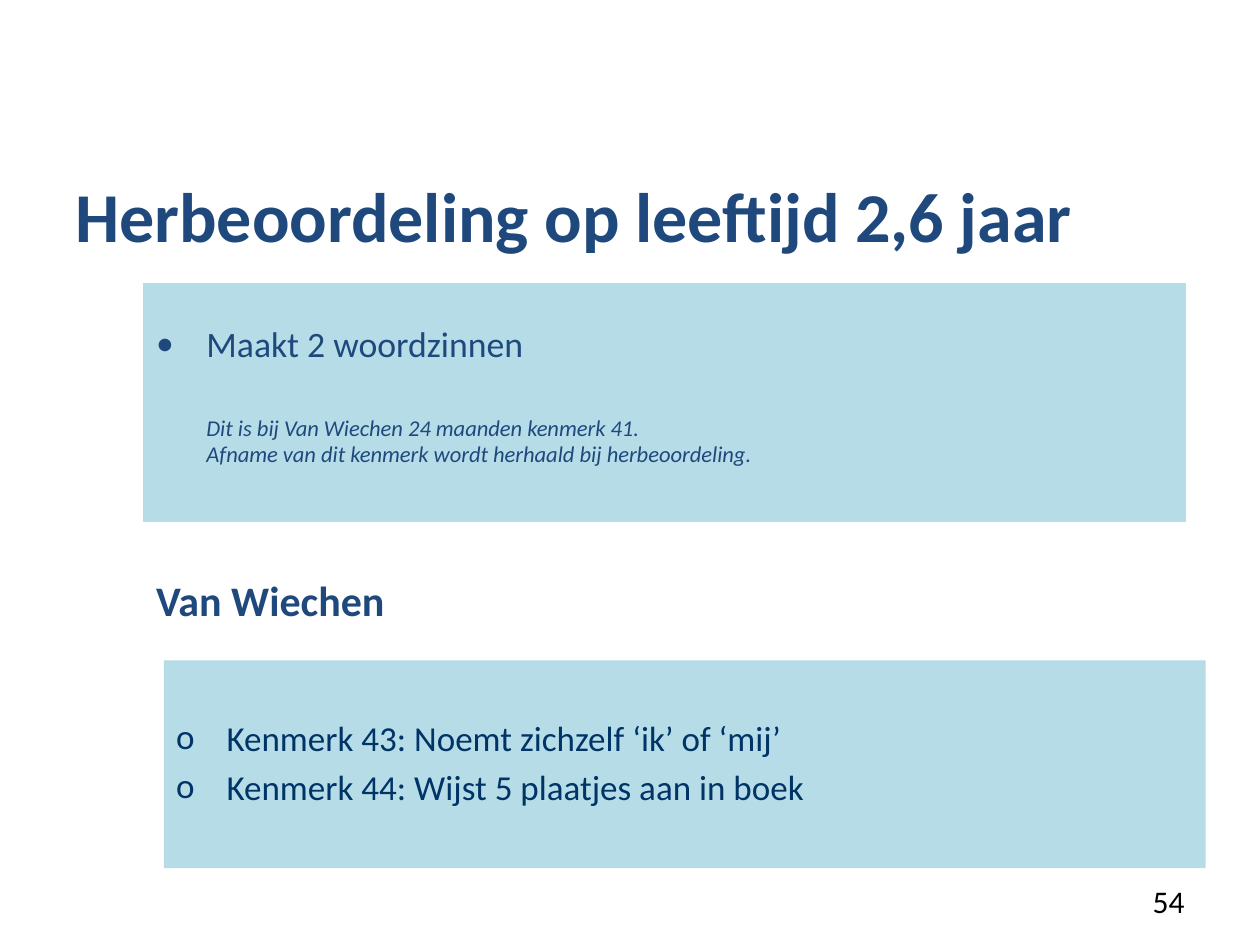
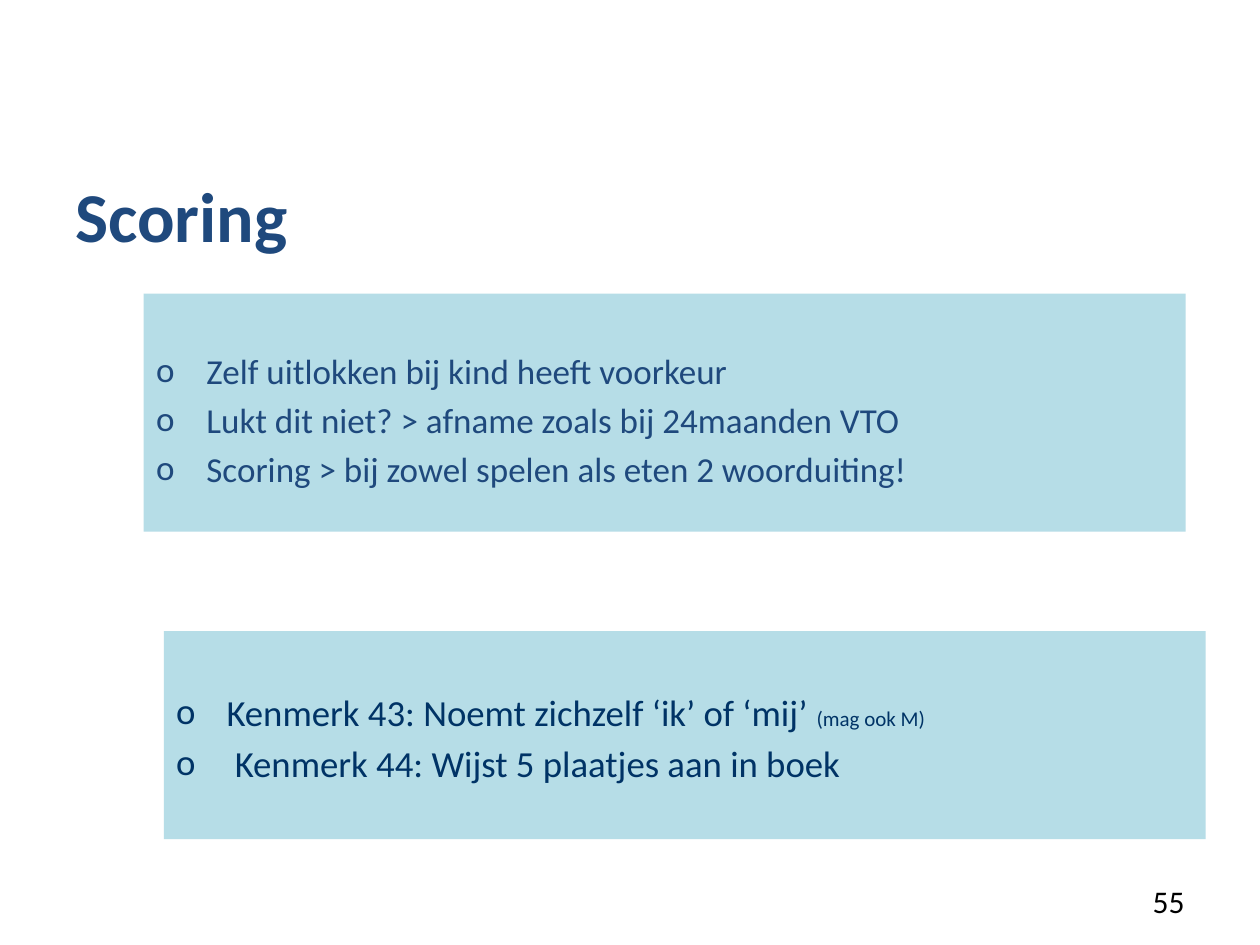
from lxml import etree
from pptx import Presentation
from pptx.dml.color import RGBColor
from pptx.enum.shapes import MSO_SHAPE
from pptx.enum.text import MSO_ANCHOR, PP_ALIGN
from pptx.oxml.ns import qn
from pptx.util import Pt

RECTANGLE = MSO_SHAPE.RECTANGLE
TOP, BOTTOM = MSO_ANCHOR.TOP, MSO_ANCHOR.BOTTOM
LEFT, RIGHT = PP_ALIGN.LEFT, PP_ALIGN.RIGHT

BLUE = RGBColor(0x1F, 0x49, 0x7D)
NAVY = RGBColor(0x00, 0x33, 0x66)
PALE_BLUE = RGBColor(0xB6, 0xDD, 0xE7)
BLACK = RGBColor(0x00, 0x00, 0x00)
FONT = "Calibri"
INDENT = 28.8
PANEL_WIDTH = 595.44


def write(frame, text, size, color, bold=False, italic=False, align=LEFT, bullet=None,
          indent=0, before=0, spacing=1, suffix="", suffix_size=12):
    paragraph = frame.paragraphs[0]
    if paragraph.runs:
        paragraph = frame.add_paragraph()
    paragraph.alignment = align
    paragraph.space_before = Pt(before)
    paragraph.line_spacing = spacing
    properties = paragraph._p.get_or_add_pPr()
    properties.set("marL", str(Pt(indent)))
    properties.set("indent", str(-Pt(indent) if bullet else 0))
    if bullet:
        etree.SubElement(properties, qn("a:buFont"), typeface=FONT)
        etree.SubElement(properties, qn("a:buChar"), char=bullet)
    for part, part_size in ((text, size), (suffix, suffix_size)):
        if part:
            run = paragraph.add_run()
            run.text = part
            font = run.font
            font.name, font.size = FONT, Pt(part_size)
            font.bold, font.italic = bold, italic
            font.color.rgb = color


class Deck:
    """Holds the presentation style and the slide being filled."""

    def __init__(self):
        self.presentation = Presentation()
        self.presentation.slide_width = Pt(720)
        self.presentation.slide_height = Pt(540)
        self.slide = None

    def start(self, title, number):
        self.slide = self.presentation.slides.add_slide(self.presentation.slide_layouts[6])
        self.label(title, 36, 95.04, 648, 90, size=40, color=BLUE, bold=True)
        self.label(number, 516.24, 500.4, 167.76, 28.8, size=18, color=BLACK, align=RIGHT)

    def label(self, text, left, top, width, height, anchor=TOP, **style):
        box = self.slide.shapes.add_textbox(Pt(left), Pt(top), Pt(width), Pt(height))
        box.text_frame.word_wrap = True
        box.text_frame.vertical_anchor = anchor
        write(box.text_frame, text, **style)

    def panel(self, left, top, height, inset, outlined=False):
        panel = self.slide.shapes.add_shape(
            RECTANGLE, Pt(left), Pt(top), Pt(PANEL_WIDTH), Pt(height))
        panel.shadow.inherit = False
        panel.fill.solid()
        panel.fill.fore_color.rgb = PALE_BLUE
        if outlined:
            panel.line.color.rgb = PALE_BLUE
            panel.line.width = Pt(0.75)
        else:
            panel.line.fill.background()
        frame = panel.text_frame
        frame.word_wrap = True
        frame.vertical_anchor = TOP
        frame.margin_top = Pt(inset)
        return frame

    def bullets(self, frame, items, size, color):
        for position, item in enumerate(items):
            write(frame, item, size, color, bullet="o", indent=INDENT,
                  before=size / 5 if position else 0)


def main():
    deck = Deck()

    deck.start("Herbeoordeling op leeftijd 2,6 jaar", "54")
    sentences = deck.panel(82.08, 162, 136.08, 26.6, outlined=True)
    write(sentences, "Maakt 2 woordzinnen", 20.4, BLUE, bullet="•", indent=INDENT, spacing=0.8)
    notes = (("Dit is bij Van Wiechen 24 maanden kenmerk 41.", 31.3),
             ("Afname van dit kenmerk wordt herhaald bij herbeoordeling.", 2.6))
    for note, gap in notes:
        write(sentences, note, 12.9, BLUE, italic=True, indent=INDENT, before=gap, spacing=0.8)
    features = deck.panel(93.6, 377.28, 118.8, 32)
    deck.bullets(features, ["Kenmerk 43: Noemt zichzelf ‘ik’ of ‘mij’",
                            "Kenmerk 44: Wijst 5 plaatjes aan in boek"], 20, NAVY)
    deck.label("Van Wiechen", 82.08, 270.72, 576, 90, anchor=BOTTOM,
               size=24, color=BLUE, bold=True)

    deck.start("Scoring", "55")
    scoring = deck.panel(82.08, 167.76, 136.08, 32)
    deck.bullets(scoring, ["Zelf uitlokken bij kind heeft voorkeur",
                           "Lukt dit niet? > afname zoals bij 24maanden VTO",
                           "Scoring > bij zowel spelen als eten 2 woorduiting!"], 20, BLUE)
    scored_features = deck.panel(93.6, 360.72, 118.8, 33.4)
    write(scored_features, "Kenmerk 43: Noemt zichzelf ‘ik’ of ‘mij’ ", 21, NAVY,
          bullet="o", indent=INDENT, suffix="(mag ook M)")
    write(scored_features, "Kenmerk 44: Wijst 5 plaatjes aan in boek", 21, NAVY,
          bullet="o", indent=INDENT + 4.7, before=4.2)

    deck.presentation.save("out.pptx")


if __name__ == "__main__":
    main()
